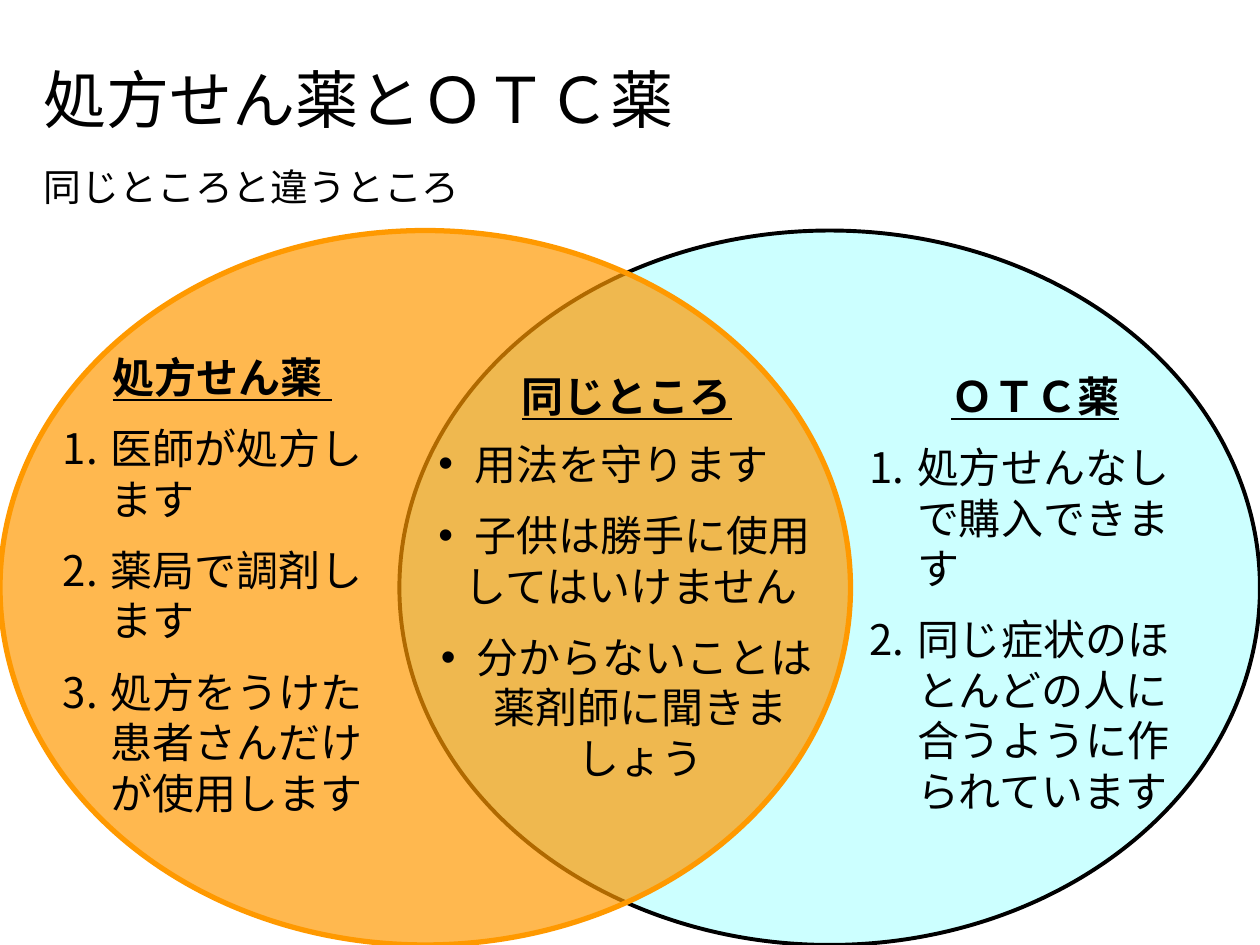
from lxml import etree
from pptx import Presentation
from pptx.dml.color import RGBColor
from pptx.enum.shapes import MSO_SHAPE
from pptx.enum.text import MSO_ANCHOR, MSO_AUTO_SIZE, PP_ALIGN
from pptx.oxml.ns import qn
from pptx.util import Inches, Pt

OVAL = MSO_SHAPE.OVAL
CENTER, LEFT = PP_ALIGN.CENTER, PP_ALIGN.LEFT
MIDDLE = MSO_ANCHOR.MIDDLE
GROW = MSO_AUTO_SIZE.SHAPE_TO_FIT_TEXT

BLACK = RGBColor(0x00, 0x00, 0x00)
ORANGE = RGBColor(0xFF, 0x99, 0x00)
PALE_CYAN = RGBColor(0xCC, 0xFF, 0xFF)

WIDTH, HEIGHT = 10, 7.5
OVAL_TOP = 1.83
NUMBER = ("buAutoNum", {"type": "arabicPeriod"}, 0.38)
BULLET = ("buChar", {"char": "•"}, 0.21)


def add_oval(slide, left, right, fill, line, line_width, opacity=100):
    """Add one circle of the Venn diagram, reaching the slide's bottom edge."""
    shape = slide.shapes.add_shape(
        OVAL, Inches(left), Inches(OVAL_TOP), Inches(right - left), Inches(HEIGHT - OVAL_TOP))
    shape.shadow.inherit = False
    shape.fill.solid()
    shape.fill.fore_color.rgb = fill
    shape.line.color.rgb = line
    shape.line.width = Pt(line_width)
    if opacity < 100:
        color = shape.fill._xPr.find(qn("a:solidFill"))[0]
        etree.SubElement(color, qn("a:alpha"), val=str(opacity * 1000))


def add_text_frame(slide, left, top, width, height):
    """Add a wrapping text box and return its text frame."""
    box = slide.shapes.add_textbox(Inches(left), Inches(top), Inches(width), Inches(height))
    box.text_frame.word_wrap = True
    return box.text_frame


def style_font(paragraph, name, size, bold=False):
    """Set the font of a paragraph; bold headings are underlined as well."""
    font = paragraph.font
    font.name, font.size = name, Pt(size)
    font.bold = font.underline = bold
    font.color.rgb = BLACK


def add_marker(paragraph, marker):
    """Give a paragraph a hanging bullet or number."""
    tag, attributes, indent = marker
    properties = paragraph._p.get_or_add_pPr()
    properties.set("marL", str(Inches(indent)))
    properties.set("indent", str(-Inches(indent)))
    etree.SubElement(properties, qn("a:buFont"), typeface="Arial")
    etree.SubElement(properties, qn(f"a:{tag}"), attributes)


def add_title(slide, title, subtitle):
    """Add the slide title with its smaller second line."""
    frame = add_text_frame(slide, 0.25, 0.5, WIDTH - 0.5, 1.25)
    frame.vertical_anchor = MIDDLE
    first, second = frame.paragraphs[0], frame.add_paragraph()
    for paragraph, text, size in ((first, title, 36), (second, subtitle, 21.6)):
        paragraph.text = text
        paragraph.line_spacing = 0.8
        style_font(paragraph, "Calibri", size)
    second.space_before = Pt(21)


def add_list(slide, position, heading, items, marker, first_gap=12, last_alignment=LEFT):
    """Add a centred heading followed by marked items."""
    frame = add_text_frame(slide, *position)
    frame.auto_size = GROW
    title = frame.paragraphs[0]
    title.text = heading
    title.alignment = CENTER
    style_font(title, "Arial", 24, bold=True)
    for index, item in enumerate(items):
        paragraph = frame.add_paragraph()
        paragraph.text = item
        paragraph.alignment = last_alignment if index == len(items) - 1 else LEFT
        paragraph.space_before = Pt(12 if index else first_gap)
        add_marker(paragraph, marker)
        style_font(paragraph, "Arial", 24)


def main():
    """Build the slide and save it."""
    presentation = Presentation()
    presentation.slide_width, presentation.slide_height = Inches(WIDTH), Inches(HEIGHT)
    slide = presentation.slides.add_slide(presentation.slide_layouts[6])

    add_title(slide, "処方せん薬とＯＴＣ薬", "同じところと違うところ")
    add_oval(slide, 3.17, WIDTH, PALE_CYAN, BLACK, 2.25)
    add_oval(slide, 0, 6.75, ORANGE, ORANGE, 3, opacity=69)

    add_list(slide, (0.4, 2.74, 2.73, 3.84), "処方せん薬 ",
             ["医師が処方します", "薬局で調剤します", "処方をうけた患者さんだけが使用します"], NUMBER)
    add_list(slide, (6.8, 2.89, 2.83, 3.53), "ＯＴＣ薬",
             ["処方せんなしで購入できます", "同じ症状のほとんどの人に合うように作られています"], NUMBER)
    add_list(slide, (3.38, 2.89, 3.19, 3), "同じところ",
             [" 用法を守ります", " 子供は勝手に使用してはいけません", " 分からないことは薬剤師に聞きましょう"],
             BULLET, first_gap=10, last_alignment=CENTER)

    presentation.save("out.pptx")


if __name__ == "__main__":
    main()
